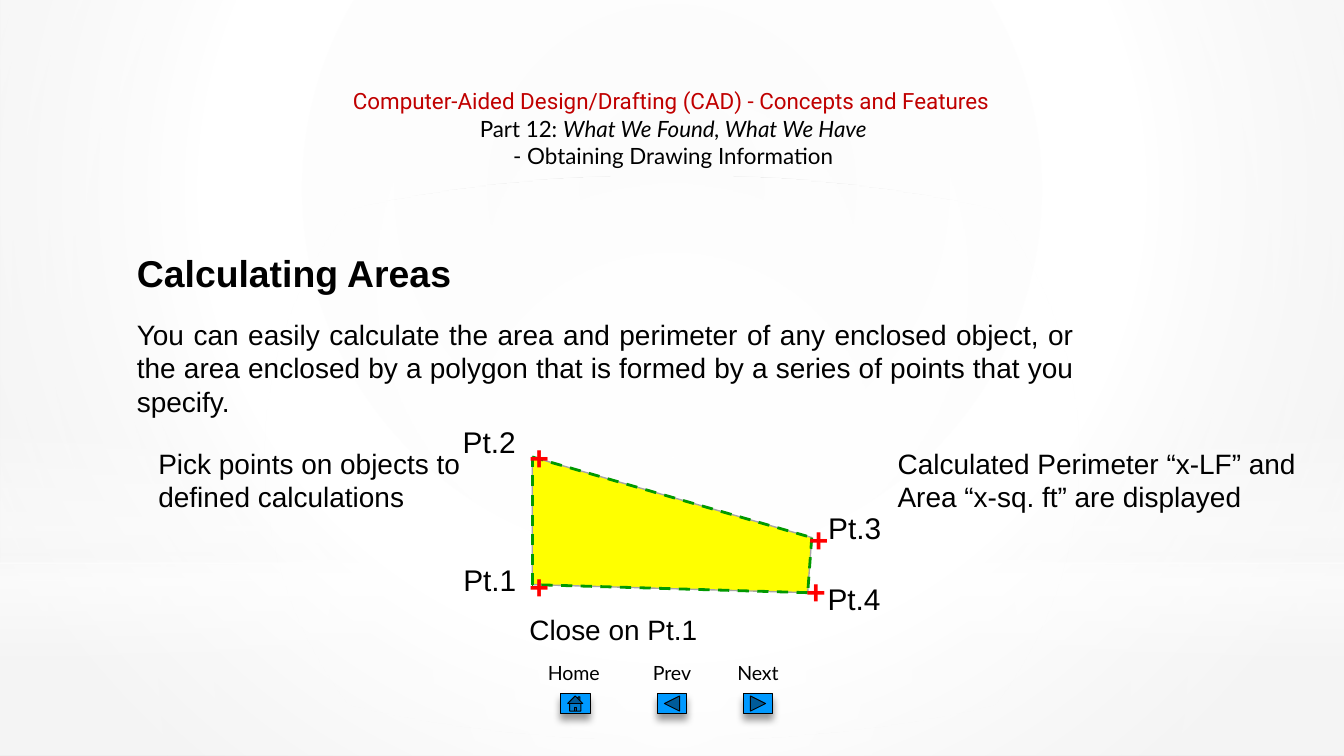
import pptx
import pptx.util
import pptx.dml.color
import pptx.enum.dml
import pptx.enum.shapes
import pptx.enum.text
import pptx.oxml
import pptx.oxml.ns

COLUMNS, ROWS = 100, 56.25
CELL = pptx.util.Inches(0.1)
COLORS = {
    "white": "FFFFFF", "mist": "F4F4F4", "silver": "CCCCCC", "black": "000000",
    "title": "C00000", "button": "0099FF", "area": "FFFF00", "outline": "A6A6A6",
    "dash": "009900", "mark": "FF0000",
}
ALIGN = pptx.enum.text.PP_ALIGN
SHAPE = pptx.enum.shapes.MSO_SHAPE
NAMESPACE = pptx.oxml.ns.nsdecls("a")


def cells(*counts):
    return [round(count * CELL) for count in counts]


def color(name):
    return pptx.dml.color.RGBColor.from_string(COLORS[name])


def apply_gradient(element, stops, focus=None):
    stop_xml = "".join(
        f'<a:gs pos="{place * 1000}"><a:srgbClr val="{COLORS[name]}">'
        f'<a:alpha val="{alpha * 1000}"/></a:srgbClr></a:gs>'
        for place, name, alpha in stops)
    if focus:
        sides = " ".join(f'{side}="{share * 1000}"' for side, share in zip("ltrb", focus))
        direction = f'<a:path path="circle"><a:fillToRect {sides}/></a:path>'
    else:
        direction = '<a:lin ang="5400000" scaled="0"/>'
    gradient = pptx.oxml.parse_xml(
        f'<a:gradFill {NAMESPACE} rotWithShape="1"><a:gsLst>{stop_xml}</a:gsLst>'
        f'{direction}</a:gradFill>')
    empty = next(element.iter(pptx.oxml.ns.qn("a:noFill")))
    empty.getparent().replace(empty, gradient)


def add_glow(page, kind, top, height, stops, focus=None):
    glow = page.shapes.add_shape(kind, *cells(0, top, COLUMNS, height))
    glow.shadow.inherit = False
    glow.fill.background()
    apply_gradient(glow._element.spPr, [(place, "white", alpha) for place, alpha in stops], focus)
    glow.line.fill.background()


def add_backdrop(page):
    center = (50, 50, 50, 50)
    page.background.fill.background()
    apply_gradient(page._element.cSld,
                   [(0, "mist", 100), (60, "white", 100), (100, "silver", 100)],
                   (20, 10, 20, 60))
    horizon = 41.9
    add_glow(page, SHAPE.RECTANGLE, horizon, ROWS - horizon,
             [(0, 91), (37, 76), (100, 79)], center)
    add_glow(page, SHAPE.RECTANGLE, 0, horizon, [(0, 89), (48, 62), (100, 79)], center)
    add_glow(page, SHAPE.RECTANGLE, 30.9, 18.8,
             [(0, 0), (29, 30), (45, 40), (55, 26), (65, 60), (100, 0)])
    add_glow(page, SHAPE.OVAL, 13.1, horizon, [(0, 100), (56, 0)], center)


def format_span(span, size, font, tint, bold=False):
    span.font.size = pptx.util.Pt(size)
    span.font.name = font
    span.font.color.rgb = color(tint)
    span.font.bold = bold


def add_label(page, area, text, size, font="Arial", tint="black",
              align=ALIGN.LEFT, bold=False, wrap=True):
    box = page.shapes.add_textbox(*cells(*area))
    box.text_frame.word_wrap = wrap
    box.text_frame.auto_size = pptx.enum.text.MSO_AUTO_SIZE.SHAPE_TO_FIT_TEXT
    box.text_frame.text = text
    for para in box.text_frame.paragraphs:
        para.alignment = align
        for span in para.runs:
            format_span(span, size, font, tint, bold)
    return box


def add_header(page):
    add_label(page, (24, 6, 51.9, 3),
              "Computer-Aided Design/Drafting (CAD) - Concepts and Features",
              12, "Roboto", "title", ALIGN.CENTER, wrap=False)
    box = add_label(page, (19, 8.1, 62.2, 5), "Part 12: \n- Obtaining Drawing Information",
                    12, "Lato", align=ALIGN.CENTER)
    span = box.text_frame.paragraphs[0].add_run()
    span.text = "What We Found, What We Have"
    format_span(span, 12, "Lato", "black")
    span.font.italic = True


def add_button(page, kind, left, name, label_left, label_width):
    button = page.shapes.add_shape(kind, *cells(left, 51.6, 2.2, 1.5))
    button.fill.solid()
    button.fill.fore_color.rgb = color("button")
    button.line.color.rgb = color("black")
    button.line.width = pptx.util.Pt(0.5)
    button._element.spPr.append(pptx.oxml.parse_xml(
        f'<a:effectLst {NAMESPACE}><a:outerShdw blurRad="50800" dist="38100" dir="5400000">'
        f'<a:srgbClr val="{COLORS["black"]}"><a:alpha val="40000"/></a:srgbClr>'
        '</a:outerShdw></a:effectLst>'))
    add_label(page, (label_left, 48.7, label_width, 2.8), name, 10.5, "Lato",
              align=ALIGN.CENTER)


def add_area(page, corners):
    points = [cells(*corner) for corner in corners]
    builder = page.shapes.build_freeform(*points[0])
    builder.add_line_segments(points[1:], close=True)
    area = builder.convert_to_shape()
    area.shadow.inherit = False
    area.fill.solid()
    area.fill.fore_color.rgb = color("area")
    area.line.color.rgb = color("outline")
    area.line.width = pptx.util.Pt(0.75)
    for start, end in zip(points, points[1:] + points[:1]):
        add_dash(page, start, end)


def add_dash(page, start, end):
    edge = page.shapes.add_connector(pptx.enum.shapes.MSO_CONNECTOR.STRAIGHT, *start, *end)
    edge.line.color.rgb = color("dash")
    edge.line.width = pptx.util.Pt(1.5)
    edge.line.dash_style = pptx.enum.dml.MSO_LINE.DASH
    edge._element.spPr.append(pptx.oxml.parse_xml(f"<a:effectLst {NAMESPACE}/>"))


def add_point(page, name, label_place, label_width, mark_place):
    add_label(page, (*label_place, label_width, 3.7), name, 16, align=ALIGN.CENTER)
    add_label(page, (*mark_place, 2.5, 4), "+", 18, tint="mark", align=ALIGN.CENTER, bold=True)


def main():
    deck = pptx.Presentation()
    deck.slide_width, deck.slide_height = cells(COLUMNS, ROWS)
    page = deck.slides.add_slide(deck.slide_layouts[6])

    add_backdrop(page)
    add_header(page)
    for button in (
        (SHAPE.ACTION_BUTTON_FORWARD_OR_NEXT, 55.3, "Next", 51.2, 10.4),
        (SHAPE.ACTION_BUTTON_BACK_OR_PREVIOUS, 48.9, "Prev", 44.8, 10.4),
        (SHAPE.ACTION_BUTTON_HOME, 41.7, "Home", 38.4, 8.6),
    ):
        add_button(page, *button)

    add_label(page, (9.2, 18.1, 29.2, 4.4), "Calculating Areas", 20, bold=True)
    add_label(page, (9.2, 23.1, 71.7, 6.1),
              "You can easily calculate the area and perimeter of any enclosed object, "
              "or the area enclosed by a polygon that is formed by a series of points "
              "that you specify.", 15, align=ALIGN.JUSTIFY)

    add_area(page, [(39.6, 43.5), (39.6, 34), (60.4, 40), (60.1, 44.1)])
    for point in (
        ("Pt.1", (33.1, 41.3), 6.7, (38.4, 41.6)),
        ("Pt.2", (33.3, 31), 6.2, (38.4, 32)),
        ("Pt.3", (60.1, 37.4), 7, (59.2, 38.1)),
        ("Pt.4", (60.2, 42.7), 6.7, (59, 42)),
    ):
        add_point(page, *point)
    add_label(page, (38.4, 45.1, 16.7, 3.5), "Close on Pt.1", 15)
    add_label(page, (65.8, 32.7, 31.9, 6.1),
              "Calculated Perimeter “x-LF” and Area “x-sq. ft” are displayed", 15)
    add_label(page, (10.8, 32.7, 28.2, 6.1),
              "Pick points on objects to defined calculations", 15)

    deck.save("out.pptx")


if __name__ == "__main__":
    main()
